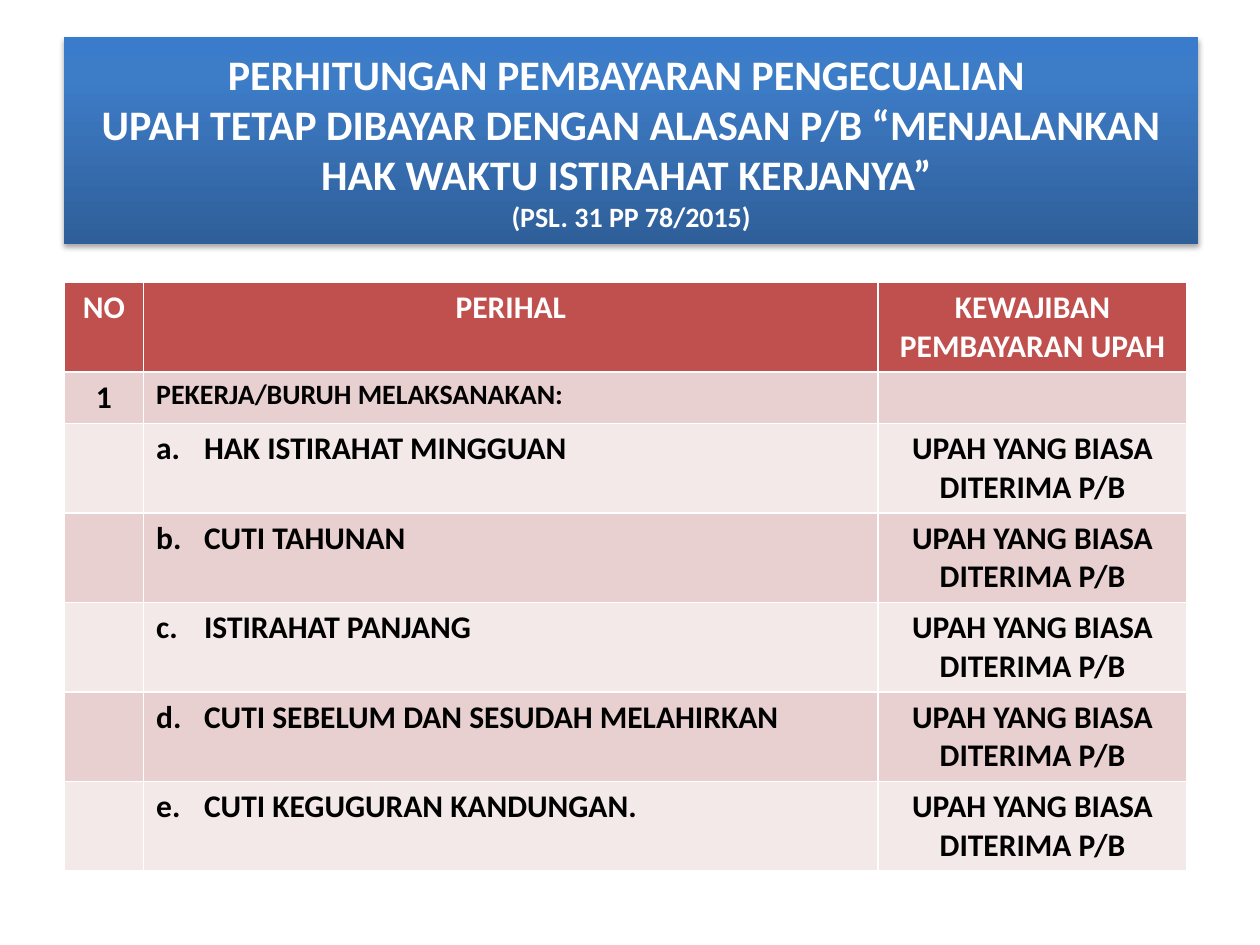
"""Build the slide on paid rest entitlements for workers."""
from lxml.etree import SubElement
from pptx import Presentation
from pptx.dml.color import RGBColor
from pptx.enum.shapes import MSO_SHAPE
from pptx.enum.text import MSO_ANCHOR, PP_ALIGN
from pptx.oxml.ns import qn
from pptx.util import Inches, Pt

FONT = "Calibri"
WHITE = RGBColor(0xFF, 0xFF, 0xFF)
BLACK = RGBColor(0x00, 0x00, 0x00)
RED = RGBColor(0xC0, 0x50, 0x4D)
PINK = RGBColor(0xE8, 0xD0, 0xD0)
PALE_PINK = RGBColor(0xF4, 0xE9, 0xE9)
BANNER_STOPS = [
    (0, RGBColor(0x2F, 0x5F, 0x99)),
    (80, RGBColor(0x3D, 0x7C, 0xC7)),
    (100, RGBColor(0x3A, 0x7C, 0xCB)),
]

HEADINGS = ["NO", "PERIHAL", "KEWAJIBAN PEMBAYARAN UPAH"]
TOPIC = "PEKERJA/BURUH MELAKSANAKAN:"
LEAVES = [
    "HAK ISTIRAHAT MINGGUAN",
    "CUTI TAHUNAN",
    "ISTIRAHAT PANJANG",
    "CUTI SEBELUM DAN SESUDAH MELAHIRKAN",
    "CUTI KEGUGURAN KANDUNGAN.",
]
WAGE = "UPAH YANG BIASA DITERIMA P/B"
COLUMN_WIDTHS = [0.63, 5.83, 2.45]
ROW_HEIGHT = 0.41
INDENT = Inches(0.38)


def style_paragraph(paragraph, size, color, align=PP_ALIGN.CENTER):
    paragraph.alignment = align
    font = paragraph.font
    font.name, font.size, font.bold = FONT, Pt(size), True
    font.color.rgb = color


def add_color(parent, color):
    return SubElement(parent, qn("a:srgbClr"), val=str(color))


def fill_gradient(shape, stops):
    shape.fill.gradient()
    shape.fill.gradient_angle = 90
    stop_list = shape.fill._xPr.find(qn("a:gradFill")).find(qn("a:gsLst"))
    for old_stop in list(stop_list):
        stop_list.remove(old_stop)
    for percent, color in stops:
        add_color(SubElement(stop_list, qn("a:gs"), pos=str(percent * 1000)), color)


def add_drop_shadow(shape):
    shape.shadow.inherit = False
    effects = shape._element.spPr.find(qn("a:effectLst"))
    shadow = SubElement(effects, qn("a:outerShdw"), blurRad=str(Pt(3.1)),
                        dist=str(Pt(1.8)), dir="5400000", rotWithShape="0")
    SubElement(add_color(shadow, BLACK), qn("a:alpha"), val="35000")


def add_banner(slide):
    banner = slide.shapes.add_shape(
        MSO_SHAPE.RECTANGLE, Inches(0.51), Inches(0.29), Inches(9), Inches(1.65))
    fill_gradient(banner, BANNER_STOPS)
    banner.line.fill.background()
    add_drop_shadow(banner)
    frame = banner.text_frame
    frame.word_wrap = True
    frame.vertical_anchor = MSO_ANCHOR.MIDDLE
    title = frame.paragraphs[0]
    title.text = ("PERHITUNGAN PEMBAYARAN PENGECUALIAN \v"
                  "UPAH TETAP DIBAYAR DENGAN ALASAN P/B “MENJALANKAN "
                  "HAK WAKTU ISTIRAHAT KERJANYA” \v")
    style_paragraph(title, 24, WHITE)
    article = title.add_run()
    article.text = "(PSL. 31 PP 78/2015)"
    article.font.size = Pt(16)


def write_cell(cell, text, color=BLACK):
    paragraph = cell.text_frame.paragraphs[0]
    paragraph.text = text
    style_paragraph(paragraph, 18, color)


def write_topic(cell):
    topic = cell.text_frame.paragraphs[0]
    topic.text = TOPIC
    topic.space_before = Pt(3.2)
    style_paragraph(topic, 16, BLACK, PP_ALIGN.JUSTIFY)


def write_lettered(cell, text, number):
    item = cell.text_frame.paragraphs[0]
    item.text = text
    properties = item._p.get_or_add_pPr()
    properties.set("marL", str(INDENT))
    properties.set("indent", str(-INDENT))
    SubElement(properties, qn("a:buAutoNum"), type="alphaLcPeriod", startAt=str(number))
    style_paragraph(item, 18, BLACK, PP_ALIGN.JUSTIFY)


def fill_rows(table):
    for index, row in enumerate(table.rows):
        row.height = Inches(ROW_HEIGHT)
        band = PINK if index % 2 else PALE_PINK
        for cell in row.cells:
            cell.fill.solid()
            cell.fill.fore_color.rgb = band if index else RED


def add_wage_table(slide):
    row_count = len(LEAVES) + 2
    table = slide.shapes.add_table(
        row_count, len(HEADINGS), Inches(0.51), Inches(2.24),
        Inches(sum(COLUMN_WIDTHS)), Inches(row_count * ROW_HEIGHT)).table
    for column, width in zip(table.columns, COLUMN_WIDTHS):
        column.width = Inches(width)
    fill_rows(table)
    for index, heading in enumerate(HEADINGS):
        write_cell(table.cell(0, index), heading, WHITE)
    write_cell(table.cell(1, 0), "1")
    write_topic(table.cell(1, 1))
    for number, leave in enumerate(LEAVES, start=1):
        write_lettered(table.cell(number + 1, 1), leave, number)
        write_cell(table.cell(number + 1, 2), WAGE)


def main():
    presentation = Presentation()
    presentation.slide_width = Inches(10)
    presentation.slide_height = Inches(7.5)
    slide = presentation.slides.add_slide(presentation.slide_layouts[6])
    add_banner(slide)
    add_wage_table(slide)
    presentation.save("out.pptx")


if __name__ == "__main__":
    main()
